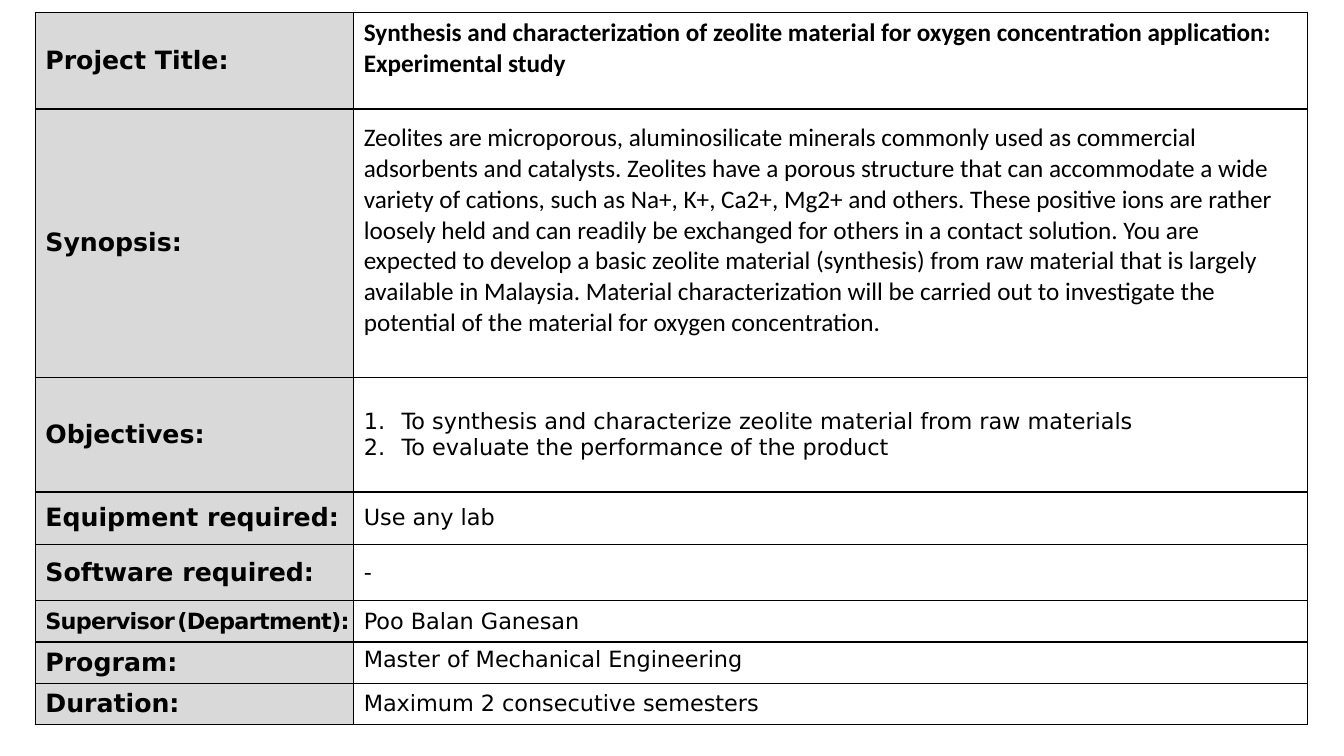
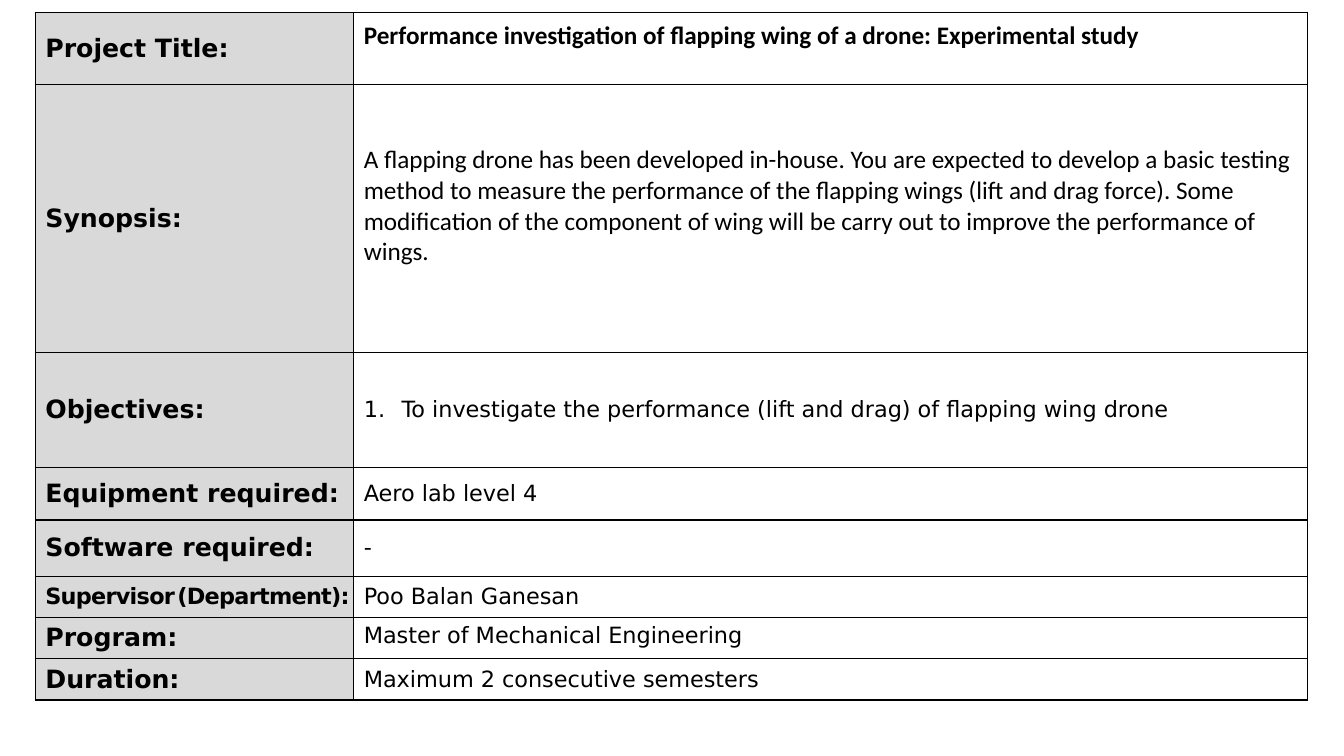
"""Build two project proposal sheets, each a table of labelled details."""
import lxml.etree
import pptx
import pptx.dml.color
import pptx.enum.text
import pptx.oxml.ns
import pptx.util

Pt = pptx.util.Pt
ANCHOR = pptx.enum.text.MSO_ANCHOR
qn = pptx.oxml.ns.qn

COLORS = {"ink": "000000", "label": "D9D9D9", "paper": "FFFFFF"}
LABEL_FONT, PROSE_FONT = "DejaVu Sans", "Calibri"
COLUMN_WIDTHS = (227.5, 681)
DETAIL_HEIGHTS = (191.5, 82, 37.5, 40.25, 29.5, 29.5, 29.5)


def rgb(name):
    return pptx.dml.color.RGBColor.from_string(COLORS[name])


def write(paragraph, text, size=16, bold=False, font=LABEL_FONT, spacing=0):
    run = paragraph.add_run()
    run.text = text
    run.font.size = Pt(size)
    run.font.bold = bold
    run.font.name = font
    run.font.color.rgb = rgb("ink")
    if spacing:
        run.font._element.set("spc", str(int(spacing * 100)))


class ProposalSheets:
    def __init__(self):
        self.deck = pptx.Presentation()
        self.deck.slide_width = Pt(960)
        self.deck.slide_height = Pt(540)
        self.slide = None

    def new_slide(self):
        self.slide = self.deck.slides.add_slide(self.deck.slide_layouts[6])

    def grid(self, heights):
        frame = self.slide.shapes.add_table(
            len(heights), len(COLUMN_WIDTHS), Pt(25.2), Pt(8.7),
            Pt(sum(COLUMN_WIDTHS)), Pt(sum(heights)))
        table = frame.table
        table.first_row = table.horz_banding = False
        for column, width in zip(table.columns, COLUMN_WIDTHS):
            column.width = Pt(width)
        for row, height in zip(table.rows, heights):
            row.height = Pt(height)
            for cell, fill in zip(row.cells, ("label", "paper")):
                self.style_cell(cell, fill)
        return table

    def style_cell(self, cell, fill):
        properties = cell._tc.get_or_add_tcPr()
        for side in ("lnL", "lnR", "lnT", "lnB"):
            border = lxml.etree.SubElement(properties, qn(f"a:{side}"), w=str(Pt(1)))
            paint = lxml.etree.SubElement(border, qn("a:solidFill"))
            lxml.etree.SubElement(paint, qn("a:srgbClr"), val=COLORS["ink"])
        cell.fill.solid()
        cell.fill.fore_color.rgb = rgb(fill)
        cell.vertical_anchor = ANCHOR.MIDDLE

    def label(self, cell, text):
        write(cell.text_frame.paragraphs[0], text, size=18, bold=True)

    def tight_label(self, cell, first, second):
        cell.margin_right = 0
        paragraph = cell.text_frame.paragraphs[0]
        for text, size in ((first, 16), (" ", 5), (second, 16)):
            write(paragraph, text, size=size, bold=True, spacing=-0.5)

    def prose(self, cell, text, bold=False):
        cell.margin_bottom = Pt(21.6)
        write(cell.text_frame.paragraphs[0], text, size=18, bold=bold, font=PROSE_FONT)

    def detail(self, cell, text, anchor=ANCHOR.MIDDLE):
        cell.vertical_anchor = anchor
        write(cell.text_frame.paragraphs[0], text)

    def numbered(self, cell, items):
        frame = cell.text_frame
        for index, item in enumerate(items):
            paragraph = frame.add_paragraph() if index else frame.paragraphs[0]
            properties = paragraph._p.get_or_add_pPr()
            properties.set("marL", str(Pt(27)))
            properties.set("indent", str(Pt(-27)))
            lxml.etree.SubElement(properties, qn("a:buFont"), typeface="+mj-lt")
            lxml.etree.SubElement(properties, qn("a:buAutoNum"), type="arabicPeriod")
            write(paragraph, item)

    def proposal(self, title, title_height, synopsis, objectives, equipment):
        self.new_slide()
        table = self.grid((title_height, *DETAIL_HEIGHTS))
        labels, values = zip(*(tuple(row.cells) for row in table.rows))
        names = ("Project Title:", "Synopsis:", "Objectives:", "Equipment required:",
                 "Software required:", None, "Program:", "Duration:")
        for cell, name in zip(labels, names):
            if name:
                self.label(cell, name)
            else:
                self.tight_label(cell, "Supervisor", "(Department):")
        self.prose(values[0], title, bold=True)
        self.prose(values[1], synopsis)
        self.numbered(values[2], objectives)
        self.detail(values[3], equipment)
        self.detail(values[4], "-")
        self.detail(values[5], "Poo Balan Ganesan")
        self.detail(values[6], "Master of Mechanical Engineering", anchor=ANCHOR.TOP)
        self.detail(values[7], "Maximum 2 consecutive semesters")


def main():
    sheets = ProposalSheets()
    sheets.proposal(
        title="Synthesis and characterization of zeolite material for oxygen "
              "concentration application: Experimental study",
        title_height=69.25,
        synopsis="Zeolites are microporous, aluminosilicate minerals commonly used as "
                 "commercial adsorbents and catalysts. Zeolites have a porous structure "
                 "that can accommodate a wide variety of cations, such as Na+, K+, Ca2+, "
                 "Mg2+ and others. These positive ions are rather loosely held and can "
                 "readily be exchanged for others in a contact solution. You are expected "
                 "to develop a basic zeolite material (synthesis) from raw material that "
                 "is largely available in Malaysia. Material characterization will be "
                 "carried out to investigate the potential of the material for oxygen "
                 "concentration.",
        objectives=("To synthesis and characterize zeolite material from raw materials",
                    "To evaluate the performance of the product"),
        equipment="Use any lab")
    sheets.proposal(
        title="Performance investigation of flapping wing of a drone: Experimental study",
        title_height=51.75,
        synopsis="A flapping drone has been developed in-house. You are expected to "
                 "develop a basic testing method to measure the performance of the "
                 "flapping wings (lift and drag force). Some modification of the "
                 "component of wing will be carry out to improve the performance of wings.",
        objectives=("To investigate the performance (lift and drag) of flapping wing drone",),
        equipment="Aero lab level 4")
    sheets.deck.save("out.pptx")


if __name__ == "__main__":
    main()
